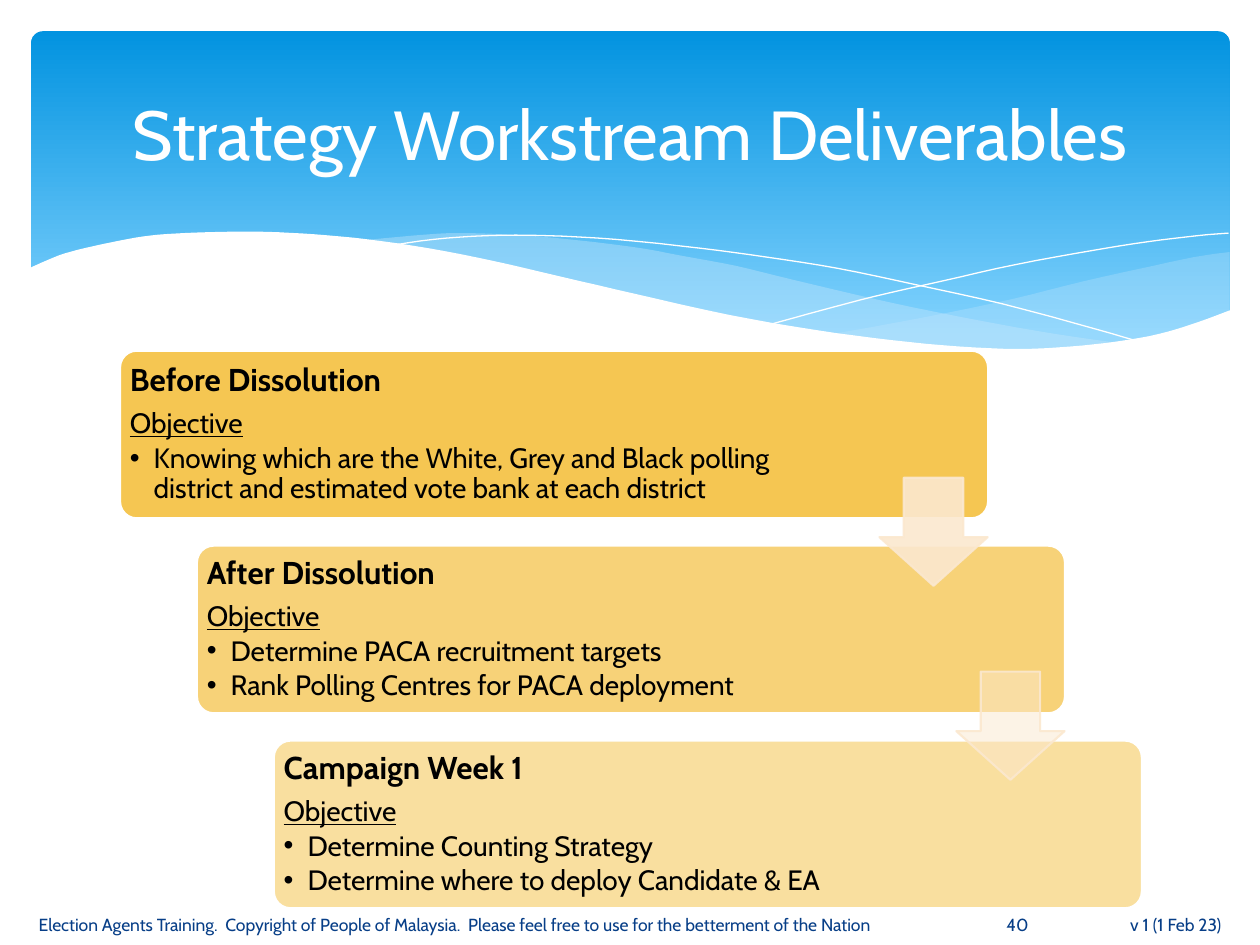
import pptx
import pptx.util
import pptx.dml.color
import pptx.enum.shapes
import pptx.enum.text
import pptx.oxml
import pptx.oxml.ns
import lxml.etree

Cm, Pt = pptx.util.Cm, pptx.util.Pt
Shape = pptx.enum.shapes.MSO_SHAPE
Align = pptx.enum.text.PP_ALIGN
Anchor = pptx.enum.text.MSO_ANCHOR

theme = {
    "font": "Cabin", "bullet": "Arial",
    "title": 39.6, "head": 18, "body": 16, "foot": 10,
    "white": "FFFFFF", "black": "000000", "navy": "073E87",
    "top": "0293E0", "base": "83D3FE", "mist": "C6E7FC",
    "gold": "F5C040", "cream": "FBE8CF",
}

title = "Strategy Workstream Deliverables"
steps = [
    ("Before Dissolution", [
        "Knowing which are the White, Grey and Black polling district "
        "and estimated vote bank at each district"]),
    ("After Dissolution", [
        "Determine PACA recruitment targets",
        "Rank Polling Centres for PACA deployment"]),
    ("Campaign Week 1", [
        "Determine Counting Strategy",
        "Determine where to deploy Candidate & EA"]),
]
fades = [90, 70, 50]
widths = [13.87, 13.56, 13.56]
arrow_fades = [90, 50]
notes = [
    ("v 1 (1 Feb 23)", 21.31, 3.56, Align.RIGHT),
    ("Election Agents Training.  Copyright of People of Malaysia.  "
     "Please feel free to use for the betterment of the Nation",
     0.53, 18.29, Align.LEFT),
    ("40", 19.71, 1.6, Align.CENTER),
]

grain = 1000
right_wave = [
    [(9.76, 2), (9.48, 2.04), (9.06, 2.13), (8.61, 2.23), (8.05, 2.37),
     (7.53, 2.48), (7.06, 2.57), (6.61, 2.65)],
    [(6.61, 2.65), (6.91, 2.69), (7.32, 2.74), (7.69, 2.77), (8.03, 2.78),
     (8.44, 2.77), (8.81, 2.73), (9.13, 2.67), (9.42, 2.59), (9.76, 2.47)],
]
mid_wave = [
    [(8.93, 2.73), (8.37, 2.65), (7.75, 2.54), (7.06, 2.4), (6.29, 2.22),
     (5.84, 2.11), (5.41, 2.03), (5.02, 1.96), (4.42, 1.89), (3.99, 1.86),
     (3.61, 1.85), (3.28, 1.87), (2.86, 1.91)],
    [(2.86, 1.91), (3.23, 1.96), (3.62, 2.03), (4.04, 2.11), (4.49, 2.22),
     (5.3, 2.4), (6.01, 2.55), (6.65, 2.66), (7.22, 2.74), (7.73, 2.77),
     (8.18, 2.78), (8.57, 2.77), (8.93, 2.73)],
]
long_line = [
    [(3.09, 1.95), (3.44, 1.9), (3.87, 1.87), (4.33, 1.87), (4.89, 1.9),
     (5.56, 1.97), (6.08, 2.04), (6.65, 2.13), (7.27, 2.26), (7.95, 2.41),
     (8.69, 2.61), (9.07, 2.72)],
]
short_line = [
    [(6.13, 2.57), (6.53, 2.46), (6.95, 2.35), (7.48, 2.23), (8.06, 2.1),
     (8.66, 1.99), (9.1, 1.92), (9.51, 1.87), (9.75, 1.85)],
]
front_wave = [
    [(9.77, 2.46), (9.5, 2.56), (9.2, 2.65), (8.87, 2.71), (8.5, 2.75),
     (8.09, 2.77), (7.61, 2.75), (7.08, 2.7), (6.48, 2.62), (5.79, 2.5),
     (5.03, 2.33), (4.47, 2.2), (3.91, 2.07), (3.4, 1.97), (2.92, 1.9),
     (2.5, 1.86), (2.11, 1.84), (1.77, 1.84), (1.46, 1.85), (1.19, 1.87),
     (0.95, 1.91), (0.67, 1.97), (0.46, 2.03), (0.23, 2.13)],
    [(0.23, 3.29), (9.77, 3.29)],
]
waves = [
    (right_wave, "mist", 29), (mid_wave, "mist", 40),
    (long_line, None, 0), (short_line, None, 0), (front_wave, "white", 100),
]


def tint(name):
    return pptx.dml.color.RGBColor.from_string(theme[name])


def paint(fill, name, fade=100):
    fill.solid()
    fill.fore_color.rgb = tint(name)
    if fade < 100:
        node = fill._xPr.find(".//" + pptx.oxml.ns.qn("a:srgbClr"))
        lxml.etree.SubElement(
            node, pptx.oxml.ns.qn("a:alpha"), val=str(fade * 1000))


def smooth(knots, parts=4):
    ends = [knots[0]] + knots + [knots[-1]]
    dots = [knots[0]]
    for a, b, c, d in zip(ends, ends[1:], ends[2:], ends[3:]):
        for i in range(1, parts + 1):
            t = i / parts
            dots.append(tuple(
                (2 * q + (r - p) * t + (2 * p - 5 * q + 4 * r - s) * t ** 2
                 + (3 * q - p - 3 * r + s) * t ** 3) / 2
                for p, q, r, s in zip(a, b, c, d)))
    return dots


def add_wave(slide, runs, name, fade):
    dots = [(round(x * grain), round(y * grain)) for run in runs
            for x, y in (smooth(run) if len(run) > 2 else run)]
    pen = slide.shapes.build_freeform(*dots[0], scale=Cm(2.54) / grain)
    pen.add_line_segments(dots[1:], close=name is not None)
    wave = pen.convert_to_shape()
    wave.shadow.inherit = False
    if name:
        paint(wave.fill, name, fade)
        wave.line.fill.background()
    else:
        wave.fill.background()
        paint(wave.line.fill, "white")
        wave.line.width = Pt(0)


def add_block(slide, kind, box, adjust):
    block = slide.shapes.add_shape(kind, *map(Cm, box))
    block.shadow.inherit = False
    for i, val in enumerate(adjust):
        block.adjustments[i] = val
    return block


def add_text(slide, box):
    frame = slide.shapes.add_textbox(*map(Cm, box)).text_frame
    frame.word_wrap = True
    frame.vertical_anchor = Anchor.MIDDLE
    return frame


def style(para, size, name):
    font = para.runs[0].font
    font.name, font.size = theme["font"], Pt(theme[size])
    font.color.rgb = tint(name)
    return font


def add_step(slide, i, head, goals):
    left, top = 2.42 + 1.55 * i, 7.07 + 3.93 * i
    card = add_block(slide, Shape.ROUNDED_RECTANGLE,
                     (left, top, 17.5, 3.38), [0.1])
    paint(card.fill, "gold", fades[i])
    paint(card.line.fill, "white")
    card.line.width = Pt(1.25)

    frame = add_text(slide, (left + 0.1, top + 0.1, widths[i], 3.18))
    frame.margin_left = frame.margin_right = Cm(0.1)
    frame.margin_top = frame.margin_bottom = Cm(0.18)
    frame.text = "\n".join([head, "Objective"] + goals)
    for row, para in enumerate(frame.paragraphs):
        para.line_spacing = 0.9
        para.space_after = Pt(2.4 if row else 6.3)
        if row:
            para.level = 1
            props = para._p.get_or_add_pPr()
            props.set("marL", str(Cm(0.48)))
            props.set("indent", str(-Cm(0.48)))
        if row > 1:
            lxml.etree.SubElement(
                props, pptx.oxml.ns.qn("a:buFont"), typeface=theme["bullet"])
            lxml.etree.SubElement(
                props, pptx.oxml.ns.qn("a:buChar"), char="•")
        font = style(para, "body" if row else "head", "black")
        font.bold, font.underline = row == 0, row == 1


def add_arrow(slide, i, fade):
    arrow = add_block(slide, Shape.DOWN_ARROW,
                      (17.73 + 1.55 * i, 9.63 + 3.91 * i, 2.18, 2.18),
                      [0.55, 0.45])
    paint(arrow.fill, "cream", fade)
    paint(arrow.line.fill, "cream", 90)
    arrow.line.width = Pt(1.25)


def main():
    deck = pptx.Presentation()
    deck.slide_width, deck.slide_height = Cm(25.4), Cm(19.05)
    slide = deck.slides.add_slide(deck.slide_layouts[5])

    panel = add_block(slide, Shape.ROUNDED_RECTANGLE,
                      (0.63, 0.63, 24.16, 6.86), [0.034])
    panel.fill.gradient()
    panel.fill.gradient_angle = 270
    for stop, name, spot in zip(panel.fill.gradient_stops,
                                ("top", "base"), (0, 0.9)):
        stop.color.rgb, stop.position = tint(name), spot
    panel.line.fill.background()
    for wave in waves:
        add_wave(slide, *wave)

    for i, (head, goals) in enumerate(steps):
        add_step(slide, i, head, goals)
    for i, fade in enumerate(arrow_fades):
        add_arrow(slide, i, fade)
    for text, left, width, side in notes:
        frame = add_text(slide, (left, 18.3, width, 0.66))
        frame.text = text
        frame.paragraphs[0].alignment = side
        style(frame.paragraphs[0], "foot", "navy")

    head = slide.shapes.title
    head.left, head.top, head.width, head.height = map(
        Cm, (1.27, 0.94, 22.86, 3.48))
    frame = head.text_frame
    frame.text = title
    frame.auto_size = pptx.enum.text.MSO_AUTO_SIZE.NONE
    frame.vertical_anchor = Anchor.MIDDLE
    frame.paragraphs[0].alignment = Align.CENTER
    style(frame.paragraphs[0], "title", "white")
    slide.shapes._spTree.append(head._element)
    deck.save("out.pptx")


if __name__ == "__main__":
    main()
